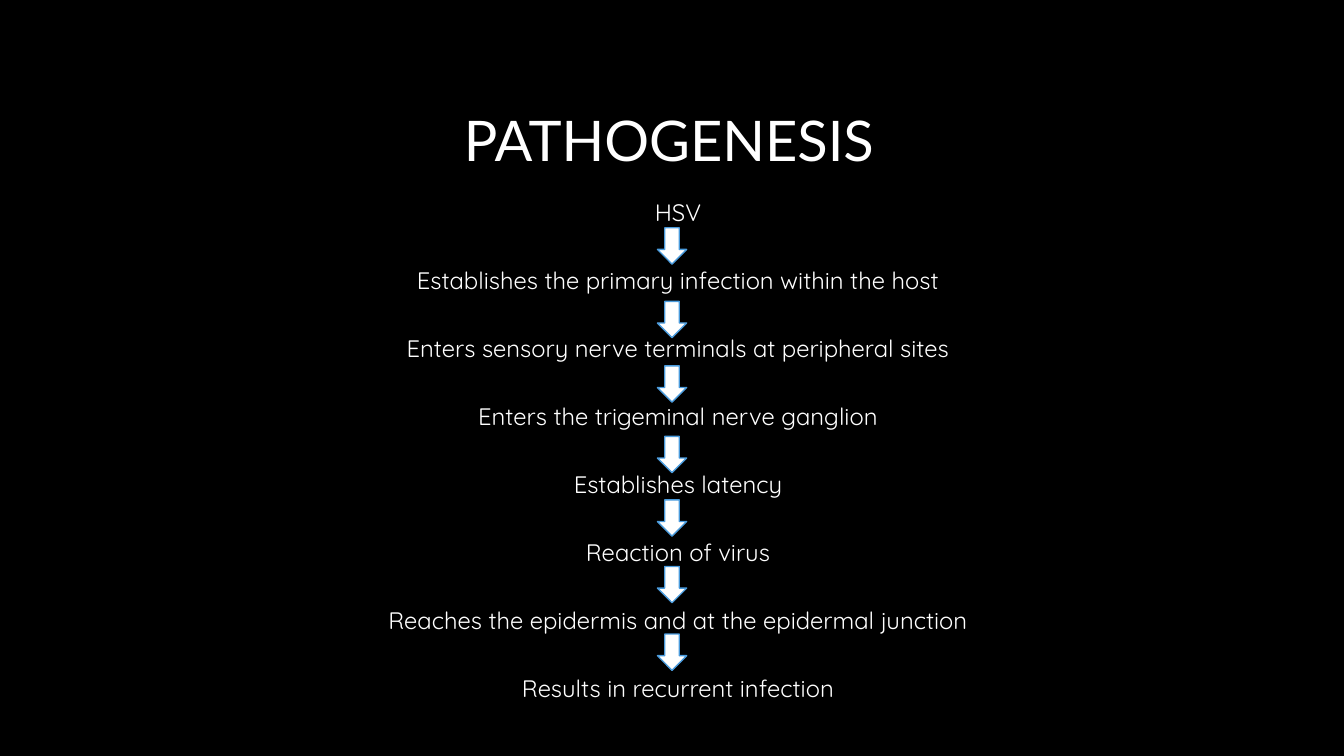
"""Build a slide showing the pathogenesis of HSV as a chain of steps."""
import pptx
import pptx.dml.color
import pptx.enum.shapes
import pptx.enum.text
import pptx.util

Inches, Pt = pptx.util.Inches, pptx.util.Pt
Align = pptx.enum.text.PP_ALIGN
Anchor = pptx.enum.text.MSO_ANCHOR

TITLE = "PATHOGENESIS"
STEPS = [
    "HSV",
    "Establishes the primary infection within the host",
    "Enters sensory nerve terminals at peripheral sites",
    "Enters the trigeminal nerve ganglion",
    "Establishes latency",
    "Reaction of virus",
    "Reaches the epidermis and at the epidermal junction",
    "Results in recurrent infection",
]
ARROW_TOPS = [2.26, 2.99, 3.63, 4.33, 4.96, 5.62, 6.29]
WHITE, BLACK, BLUE = "FFFFFF", "000000", "4A9BDC"


def paint(fill, color):
    fill.solid()
    fill.fore_color.rgb = pptx.dml.color.RGBColor.from_string(color)


def add_text(slide, lines, box, font, size, align=Align.LEFT,
             anchor=Anchor.TOP, inset=0.1, leading=None, gap=0):
    frame = slide.shapes.add_textbox(*map(Inches, box)).text_frame
    frame.word_wrap = True
    frame.vertical_anchor = anchor
    frame.margin_left = Inches(inset)
    for i, line in enumerate(lines):
        para = frame.add_paragraph() if i else frame.paragraphs[0]
        para.alignment = align
        para.line_spacing = leading
        para.space_before = Pt(gap if i else 0)
        run = para.add_run()
        run.text = line
        run.font.name, run.font.size = font, Pt(size)
        paint(run.font.fill, WHITE)


def add_arrow(slide, top):
    kind = pptx.enum.shapes.MSO_SHAPE.DOWN_ARROW
    arrow = slide.shapes.add_shape(kind, *map(Inches, (6.52, top, 0.29, 0.36)))
    arrow.shadow.inherit = False
    paint(arrow.fill, WHITE)
    paint(arrow.line.fill, BLUE)
    arrow.line.width = Pt(1)


def main():
    deck = pptx.Presentation()
    deck.slide_width, deck.slide_height = Inches(13.33), Inches(7.5)
    slide = deck.slides.add_slide(deck.slide_layouts[6])
    paint(slide.background.fill, BLACK)
    add_text(slide, [TITLE], (3.16, 0.85, 9.42, 1.14), "Lato", 40,
             anchor=Anchor.MIDDLE, inset=1.44, leading=0.9)
    add_text(slide, STEPS, (0.75, 1.99, 11.95, 5.18), "Quicksand", 17,
             align=Align.CENTER, leading=Pt(15), gap=33.6)
    for top in ARROW_TOPS:
        add_arrow(slide, top)
    deck.save("out.pptx")


if __name__ == "__main__":
    main()
